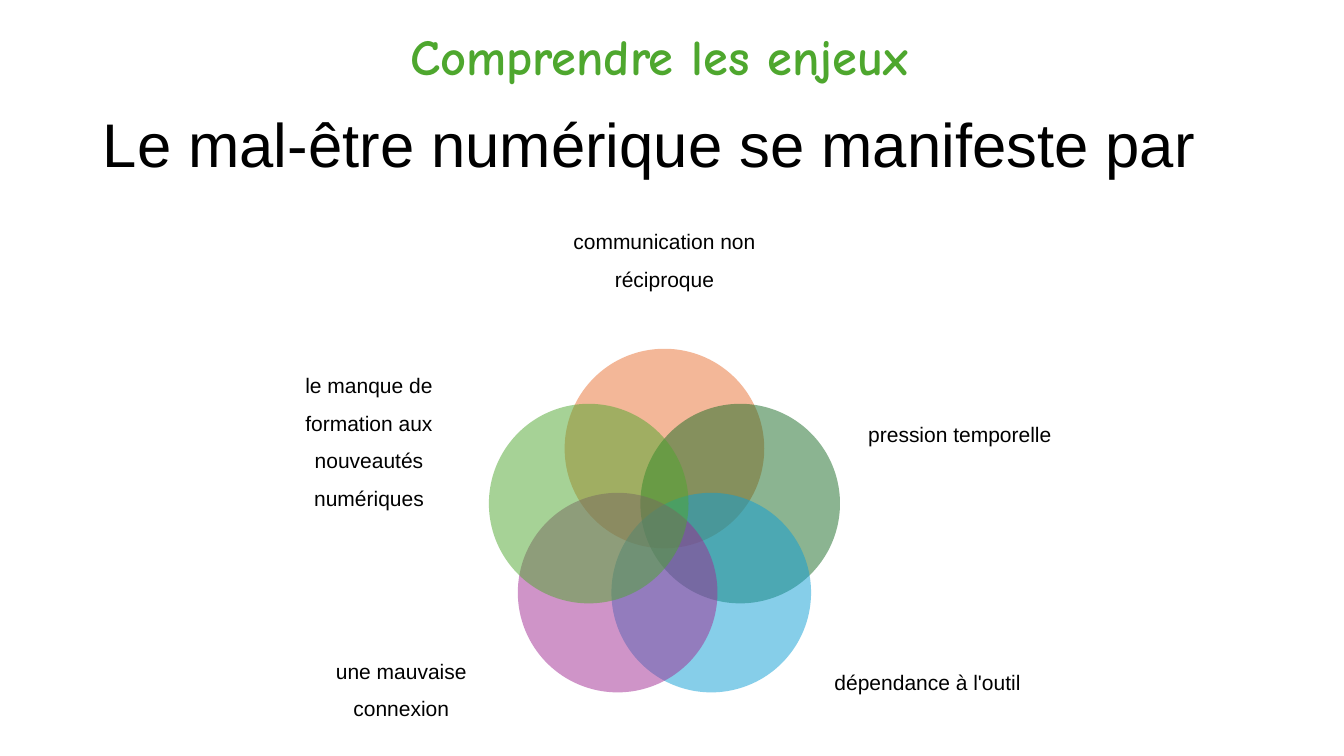
import math
from lxml import etree
from pptx import Presentation
from pptx import util as u
from pptx.dml.color import RGBColor
from pptx.enum import shapes, text
from pptx.oxml import ns

COLOURS = {
    "black": "000000",
    "orange": "E97132",
    "forest": "196B24",
    "blue": "0F9ED5",
    "purple": "A02B93",
    "green": "4EA72E",
}
TITLE_FONT = {"name": "Arial", "size": u.Pt(44), "bold": False}
LABEL_FONT = {"name": "Arial", "size": u.Pt(15), "bold": False}
HEADING_FONT = {"name": "Comic Neue", "size": u.Pt(36), "bold": True}
CENTRED = {"alignment": text.PP_ALIGN.CENTER}
NO_MARGINS = {f"margin_{side}": 0 for side in ("left", "top", "right", "bottom")}

CIRCLE_SIZE = 1.98
RING_RADIUS = 0.79
PETALS = [
    ("orange", "communication non réciproque", (2.81, 0, 2.3, 1.33), 1.5),
    ("forest", "pression temporelle", (5.86, 1.75, 2.06, 1.44), 0.9),
    ("blue", "dépendance à l'outil", (5.54, 4.21, 2.06, 1.44), 0.9),
    ("purple", "une mauvaise connexion", (0.32, 4.21, 2.06, 1.44), 1.5),
    ("green", "le manque de formation aux nouveautés numériques", (0, 1.75, 2.06, 1.44), 1.5),
]


def inches(box):
    return [u.Inches(length) for length in box]


def apply(target, values):
    for name, value in values.items():
        setattr(target, name, value)


def write(frame, words, font, colour, frame_format, paragraph_format):
    apply(frame, {"word_wrap": True, **frame_format})
    paragraph = frame.paragraphs[0]
    apply(paragraph, paragraph_format)
    run = paragraph.add_run()
    run.text = words
    apply(run.font, font)
    run.font.color.rgb = RGBColor.from_string(COLOURS[colour])


def place_title(slide, box):
    title = slide.shapes.title
    apply(title, dict(zip(("left", "top", "width", "height"), inches(box))))
    write(title.text_frame, "Le mal-être numérique se manifeste par", TITLE_FONT, "black",
          {"vertical_anchor": text.MSO_ANCHOR.MIDDLE},
          {"alignment": text.PP_ALIGN.LEFT, "line_spacing": 0.9})


def place_heading(slide, box):
    heading = slide.shapes.add_textbox(*inches(box))
    write(heading.text_frame, "Comprendre les enjeux", HEADING_FONT, "green",
          {"auto_size": text.MSO_AUTO_SIZE.SHAPE_TO_FIT_TEXT}, {})


def add_circle(group, box, colour):
    circle = group.shapes.add_shape(shapes.MSO_SHAPE.OVAL, *inches(box))
    circle.shadow.inherit = False
    circle.line.fill.background()
    circle.fill.solid()
    circle.fill.fore_color.rgb = RGBColor.from_string(COLOURS[colour])
    fill_colour = circle.fill._xPr.find(ns.qn("a:solidFill"))[0]
    etree.SubElement(fill_colour, ns.qn("a:alpha"), val="50000")


def place_venn(slide, box):
    left, top, width, height = box
    centre_x, centre_y = left + width / 2, top + height * 0.6
    group = slide.shapes.add_group_shape()
    for index, (colour, words, label_box, spacing) in enumerate(PETALS):
        angle = math.tau * index / len(PETALS)
        x = centre_x + RING_RADIUS * math.sin(angle) - CIRCLE_SIZE / 2
        y = centre_y - RING_RADIUS * math.cos(angle) - CIRCLE_SIZE / 2
        add_circle(group, (x, y, CIRCLE_SIZE, CIRCLE_SIZE), colour)
        offset_x, offset_y, label_width, label_height = label_box
        label = group.shapes.add_textbox(
            *inches((left + offset_x, top + offset_y, label_width, label_height)))
        write(label.text_frame, words, LABEL_FONT, "black",
              {"vertical_anchor": text.MSO_ANCHOR.MIDDLE, **NO_MARGINS},
              {**CENTRED, "line_spacing": spacing})


def main():
    presentation = Presentation()
    apply(presentation, {"slide_width": u.Inches(13.33), "slide_height": u.Inches(7.5)})
    slide = presentation.slides.add_slide(presentation.slide_layouts.get_by_name("Title Only"))
    place_title(slide, (0.92, 0.74, 11.5, 1.45))
    place_venn(slide, (2.63, 1.85, 7.92, 5.65))
    place_heading(slide, (3.97, 0.2, 5.69, 0.71))
    presentation.save("out.pptx")


if __name__ == "__main__":
    main()
